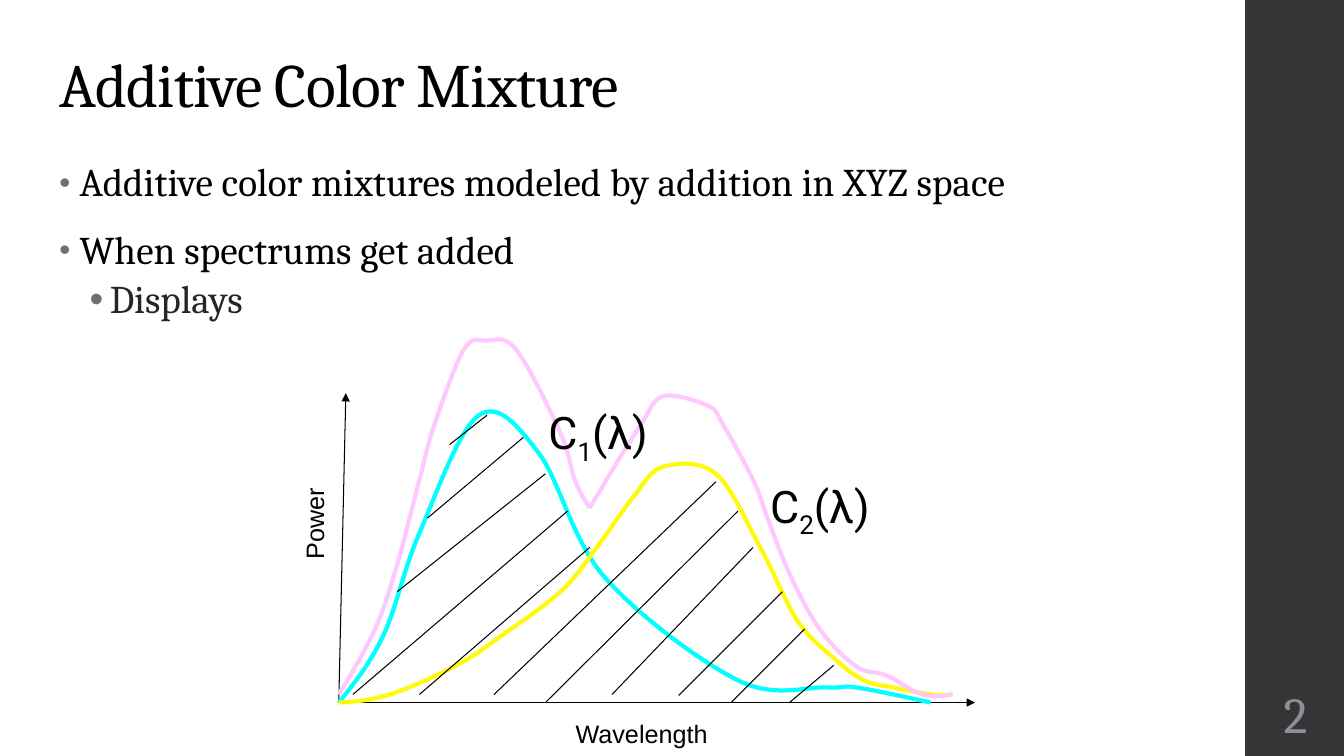
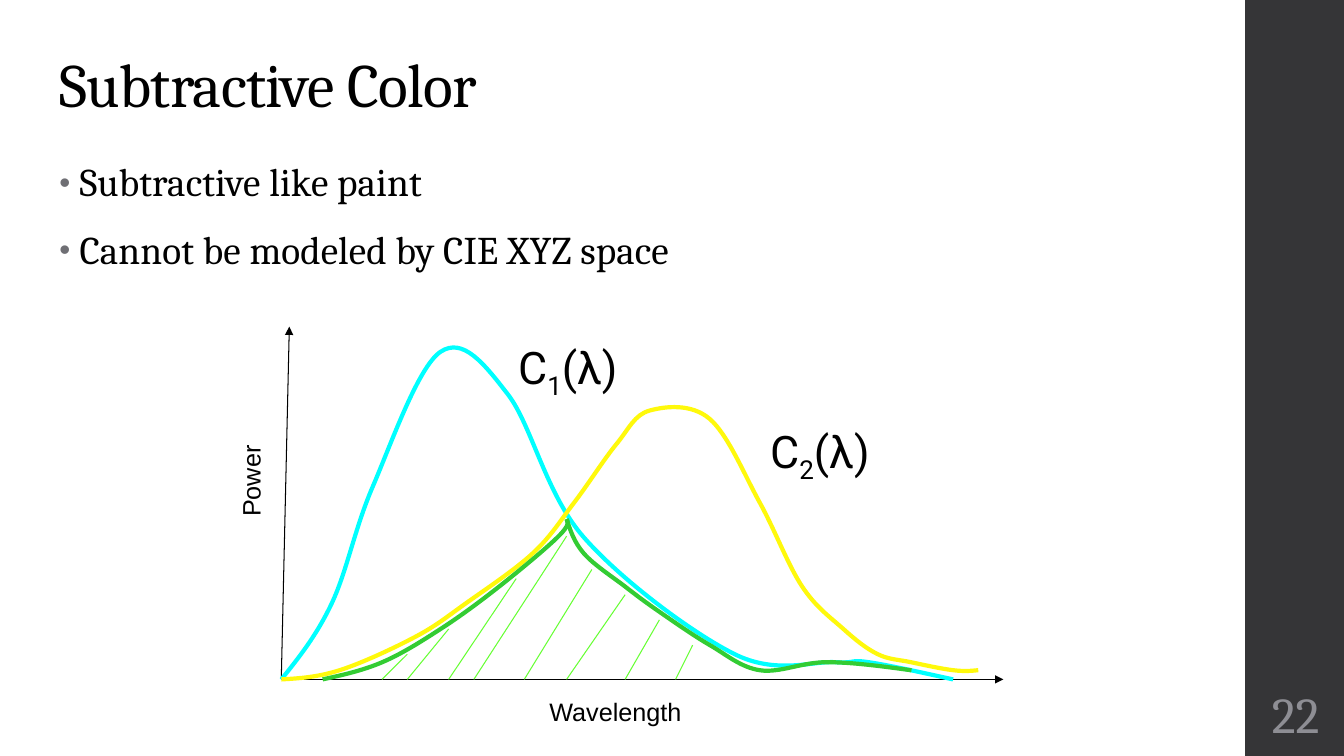
from dataclasses import dataclass
from typing import NamedTuple

import lxml.etree
import pptx
import pptx.dml.color
import pptx.enum.shapes
import pptx.enum.text
import pptx.oxml.ns
import pptx.util

Inches = pptx.util.Inches
Point = tuple[float, float]


@dataclass(frozen=True)
class Theme:
    ink: str = "000000"
    subtle_ink: str = "262626"
    band: str = "353537"
    bullet: str = "6F6F74"
    number: str = "8E8E94"
    cyan: str = "00FFFF"
    yellow: str = "FFF90B"
    pink: str = "FFC8FF"
    green: str = "33CC33"
    light_green: str = "66FF33"
    serif: str = "Cambria"
    axis_font: str = "Arial"
    symbol_font: str = "Roboto"
    title_size: float = 44
    number_size: float = 36
    symbol_size: float = 32
    body_size: float = 28
    axis_size: float = 18
    curve_width: float = 3
    line_width: float = 0.75


THEME = Theme()


class BulletStyle(NamedTuple):
    indent: float
    line_spacing: float
    before: float
    after: float
    color: str
    tracking: int
    bullet_percent: int


class Box(NamedTuple):
    left: float
    top: float
    width: float
    height: float


class Curve(NamedTuple):
    color: str
    knots: list[Point]


class Hatch(NamedTuple):
    start: Point
    end: Point


class Bullet(NamedTuple):
    text: str
    level: int = 0


@dataclass(frozen=True)
class Diagram:
    origin: Point
    scale: Point
    wavelength: Box
    power: Box
    symbols: tuple[Box, Box]
    result_curves: list[Curve]
    hatch_color: str
    hatches: list[Hatch]

    def place(self, point: Point) -> Point:
        return (self.origin[0] + point[0] * self.scale[0],
                self.origin[1] - point[1] * self.scale[1])


class Page(NamedTuple):
    title: str
    number: str
    bullets: list[Bullet]
    diagram: Diagram


BULLET_STYLES = (
    BulletStyle(0.2, 0.95, 14, 2, THEME.ink, 10, 80),
    BulletStyle(0.5, 0.9, 3, 3, THEME.subtle_ink, 0, 100),
)
POWER_TIP = (0.07, 3.07)
WAVELENGTH_TIP = (6.31, 0)
SOURCE_CURVES = [
    Curve(THEME.cyan, [
        (0, 0), (0.44, 0.66), (0.8, 1.68), (1.39, 2.85), (1.98, 2.48),
        (2.64, 1.24), (3.96, 0.22), (4.84, 0.15), (5.13, 0.15), (5.87, 0)]),
    Curve(THEME.yellow, [
        (0, 0), (0.51, 0.08), (1.17, 0.37), (1.61, 0.66), (2.2, 1.1), (2.56, 1.54),
        (2.93, 2.05), (3.22, 2.34), (3.74, 2.27), (4.18, 1.54), (4.55, 0.81),
        (4.91, 0.44), (5.21, 0.22), (5.5, 0.15), (5.87, 0.08), (6.09, 0.08)]),
]
ADDITIVE = Diagram(
    origin=(3.36, 6.97),
    scale=(1, 1),
    wavelength=Box(5.61, 7.08, 1.52, 0.4),
    power=Box(2.66, 4.99, 0.91, 0.4),
    symbols=(Box(5.34, 3.97, 1.33, 0.63), Box(7.54, 4.7, 1.19, 0.63)),
    result_curves=[
        Curve(THEME.pink, [
            (3.36, 6.89), (3.72, 6.24), (3.94, 5.6), (4.16, 4.76), (4.31, 4.21), (4.6, 3.47),
            (4.82, 3.38), (5.12, 3.47), (5.56, 4.3), (5.7, 4.76), (5.85, 5.04)]),
        Curve(THEME.pink, [
            (5.85, 5.04), (6.07, 4.67), (6.36, 4.21), (6.58, 3.93), (7.03, 4.03),
            (7.17, 4.21), (7.47, 4.76), (7.61, 5.13), (7.83, 5.69), (8.13, 6.24),
            (8.49, 6.61), (8.79, 6.7), (9.15, 6.89), (9.45, 6.89)]),
    ],
    hatch_color=THEME.ink,
    hatches=[
        Hatch((3.5, 6.89), (5.63, 5.07)), Hatch((3.94, 5.87), (5.41, 4.7)),
        Hatch((4.24, 5.14), (5.19, 4.34)), Hatch((4.46, 4.41), (4.83, 4.12)),
        Hatch((4.16, 6.89), (5.85, 5.43)), Hatch((4.9, 6.89), (7.1, 4.78)),
        Hatch((5.41, 6.97), (7.32, 5.07)), Hatch((6.07, 6.89), (7.47, 5.43)),
        Hatch((6.73, 6.9), (7.76, 5.87)), Hatch((7.25, 6.97), (7.98, 6.24)),
        Hatch((7.83, 6.97), (8.27, 6.6))],
)
SUBTRACTIVE = Diagram(
    origin=(2.79, 6.74),
    scale=(1.135, 1.14),
    wavelength=Box(5.35, 6.86, 1.52, 0.4),
    power=Box(2.03, 4.57, 0.91, 0.4),
    symbols=(Box(5.04, 3.32, 1.33, 0.63), Box(7.54, 4.15, 1.19, 0.63)),
    result_curves=[
        Curve(THEME.green, [
            (3.2, 6.74), (3.79, 6.57), (4.37, 6.24), (4.95, 5.82), (5.54, 5.32), (5.62, 5.15)]),
        Curve(THEME.green, [
            (5.62, 5.15), (5.79, 5.49), (6.2, 5.82), (6.54, 6.07), (7.04, 6.4),
            (7.54, 6.65), (8.2, 6.57), (9.04, 6.65)]),
    ],
    hatch_color=THEME.light_green,
    hatches=[
        Hatch((4.04, 6.49), (3.79, 6.74)), Hatch((4.45, 6.24), (4.04, 6.74)),
        Hatch((5.12, 5.74), (4.45, 6.74)), Hatch((5.62, 5.32), (4.7, 6.74)),
        Hatch((5.87, 5.65), (5.2, 6.74)), Hatch((6.2, 5.9), (5.62, 6.74)),
        Hatch((6.54, 6.15), (6.2, 6.74)), Hatch((6.87, 6.4), (6.7, 6.74))],
)
PAGES = [
    Page("Additive Color Mixture", "2", [
        Bullet("Additive color mixtures modeled by addition in XYZ space"),
        Bullet("When spectrums get added"),
        Bullet("Displays", 1)], ADDITIVE),
    Page("Subtractive Color", "22", [
        Bullet("Subtractive like paint"),
        Bullet("Cannot be modeled by CIE XYZ space")], SUBTRACTIVE),
]


def rgb(color: str) -> pptx.dml.color.RGBColor:
    return pptx.dml.color.RGBColor.from_string(color)


def add_child(parent, tag: str, **attributes: str):
    return lxml.etree.SubElement(parent, pptx.oxml.ns.qn(tag), attributes)


def style_font(paragraph, name: str, size: float, color: str, tracking: int = 0) -> None:
    font = paragraph.font
    font.name = name
    font.size = pptx.util.Pt(size)
    font.color.rgb = rgb(color)
    if tracking:
        font._element.set("spc", str(tracking))


def add_text_box(slide, box: Box, wrap: bool = True):
    shape = slide.shapes.add_textbox(*map(Inches, box))
    shape.text_frame.word_wrap = wrap
    if not wrap:
        shape.text_frame.auto_size = pptx.enum.text.MSO_AUTO_SIZE.SHAPE_TO_FIT_TEXT
    return shape


def add_band(slide, number: str) -> None:
    band = slide.shapes.add_shape(
        pptx.enum.shapes.MSO_SHAPE.RECTANGLE, Inches(12.35), 0, Inches(1), Inches(7.5))
    band.shadow.inherit = False
    band.fill.solid()
    band.fill.fore_color.rgb = rgb(THEME.band)
    band.line.fill.background()
    frame = add_text_box(slide, Box(12.35, 6.75, 1, 0.65)).text_frame
    frame.margin_left = frame.margin_right = Inches(0.05)
    frame.margin_top = frame.margin_bottom = Inches(0.05)
    frame.vertical_anchor = pptx.enum.text.MSO_ANCHOR.MIDDLE
    paragraph = frame.paragraphs[0]
    paragraph.text = number
    paragraph.alignment = pptx.enum.text.PP_ALIGN.CENTER
    style_font(paragraph, THEME.serif, THEME.number_size, THEME.number)


def add_title(slide, text: str) -> None:
    frame = add_text_box(slide, Box(0.49, 0.4, 11.49, 0.85)).text_frame
    frame.vertical_anchor = pptx.enum.text.MSO_ANCHOR.BOTTOM
    paragraph = frame.paragraphs[0]
    paragraph.text = text
    paragraph.line_spacing = 0.9
    style_font(paragraph, THEME.serif, THEME.title_size, THEME.ink, -50)


def add_bullets(slide, bullets: list[Bullet]) -> None:
    frame = add_text_box(slide, Box(0.49, 1.55, 11.49, 5.57)).text_frame
    for index, bullet in enumerate(bullets):
        style = BULLET_STYLES[bullet.level]
        paragraph = frame.add_paragraph() if index else frame.paragraphs[0]
        paragraph.text = bullet.text
        paragraph.level = bullet.level
        paragraph.line_spacing = style.line_spacing
        paragraph.space_before = pptx.util.Pt(style.before)
        paragraph.space_after = pptx.util.Pt(style.after)
        properties = paragraph._p.get_or_add_pPr()
        properties.set("marL", str(Inches(style.indent)))
        properties.set("indent", str(Inches(-0.2)))
        add_child(add_child(properties, "a:buClr"), "a:srgbClr", val=THEME.bullet)
        add_child(properties, "a:buSzPct", val=str(style.bullet_percent * 1000))
        add_child(properties, "a:buFont", typeface=THEME.axis_font)
        add_child(properties, "a:buChar", char="•")
        style_font(paragraph, THEME.serif, THEME.body_size, style.color, style.tracking)


def add_line(slide, start: Point, end: Point, color: str, arrow: bool = False) -> None:
    connector = slide.shapes.add_connector(
        pptx.enum.shapes.MSO_CONNECTOR.STRAIGHT, *map(Inches, start + end))
    connector.line.color.rgb = rgb(color)
    connector.line.width = pptx.util.Pt(THEME.line_width)
    if arrow:
        add_child(connector.line._get_or_add_ln(), "a:tailEnd", type="triangle")
    add_child(connector._element.spPr, "a:effectLst")


def middle(first: Point, second: Point) -> Point:
    return (first[0] + second[0]) / 2, (first[1] + second[1]) / 2


def bezier_points(knots: list[Point]) -> list[Point]:
    inner = []
    for before, (x, y), after in zip(knots, knots[1:], knots[2:]):
        dx, dy = (after[0] - before[0]) / 6, (after[1] - before[1]) / 6
        inner += [(x - dx, y - dy), (x, y), (x + dx, y + dy)]
    return [knots[0], middle(knots[0], inner[0]), *inner,
            middle(inner[-1], knots[-1]), knots[-1]]


def add_curve(slide, color: str, knots: list[Point]) -> None:
    points = [(Inches(x), Inches(y)) for x, y in bezier_points(knots)]
    builder = slide.shapes.build_freeform(*points[0])
    builder.add_line_segments(points[1:], close=False)
    shape = builder.convert_to_shape()
    outline = next(shape._element.iter(pptx.oxml.ns.qn("a:path")))
    segments = outline.findall(pptx.oxml.ns.qn("a:lnTo"))
    for index in range(0, len(segments), 3):
        bezier = add_child(outline, "a:cubicBezTo")
        for segment in segments[index:index + 3]:
            bezier.append(segment[0])
            outline.remove(segment)
    shape.shadow.inherit = False
    shape.fill.background()
    shape.line.color.rgb = rgb(color)
    shape.line.width = pptx.util.Pt(THEME.curve_width)


def add_axis_label(slide, text: str, box: Box, rotation: float = 0) -> None:
    shape = add_text_box(slide, box, wrap=False)
    shape.rotation = rotation
    paragraph = shape.text_frame.paragraphs[0]
    paragraph.text = text
    style_font(paragraph, THEME.axis_font, THEME.axis_size, THEME.ink)


def add_symbol(slide, subscript: str, box: Box) -> None:
    paragraph = add_text_box(slide, box, wrap=False).text_frame.paragraphs[0]
    style_font(paragraph, THEME.symbol_font, THEME.symbol_size, THEME.ink)
    for text in ("C", subscript, "(λ)"):
        run = paragraph.add_run()
        run.text = text
        if text == subscript:
            run.font._element.set("baseline", "-25000")


def add_diagram(slide, diagram: Diagram) -> None:
    for tip in (POWER_TIP, WAVELENGTH_TIP):
        add_line(slide, diagram.origin, diagram.place(tip), THEME.ink, arrow=True)
    add_axis_label(slide, "Wavelength", diagram.wavelength)
    add_axis_label(slide, "Power", diagram.power, 270)
    for curve in SOURCE_CURVES:
        add_curve(slide, curve.color, [diagram.place(knot) for knot in curve.knots])
    for curve in diagram.result_curves:
        add_curve(slide, curve.color, curve.knots)
    for hatch in diagram.hatches:
        add_line(slide, hatch.start, hatch.end, diagram.hatch_color)
    for subscript, box in zip("12", diagram.symbols):
        add_symbol(slide, subscript, box)


presentation = pptx.Presentation()
presentation.slide_width, presentation.slide_height = Inches(13.33), Inches(7.5)
for page in PAGES:
    page_slide = presentation.slides.add_slide(presentation.slide_layouts[6])
    add_band(page_slide, page.number)
    add_title(page_slide, page.title)
    add_bullets(page_slide, page.bullets)
    add_diagram(page_slide, page.diagram)
presentation.save("out.pptx")
